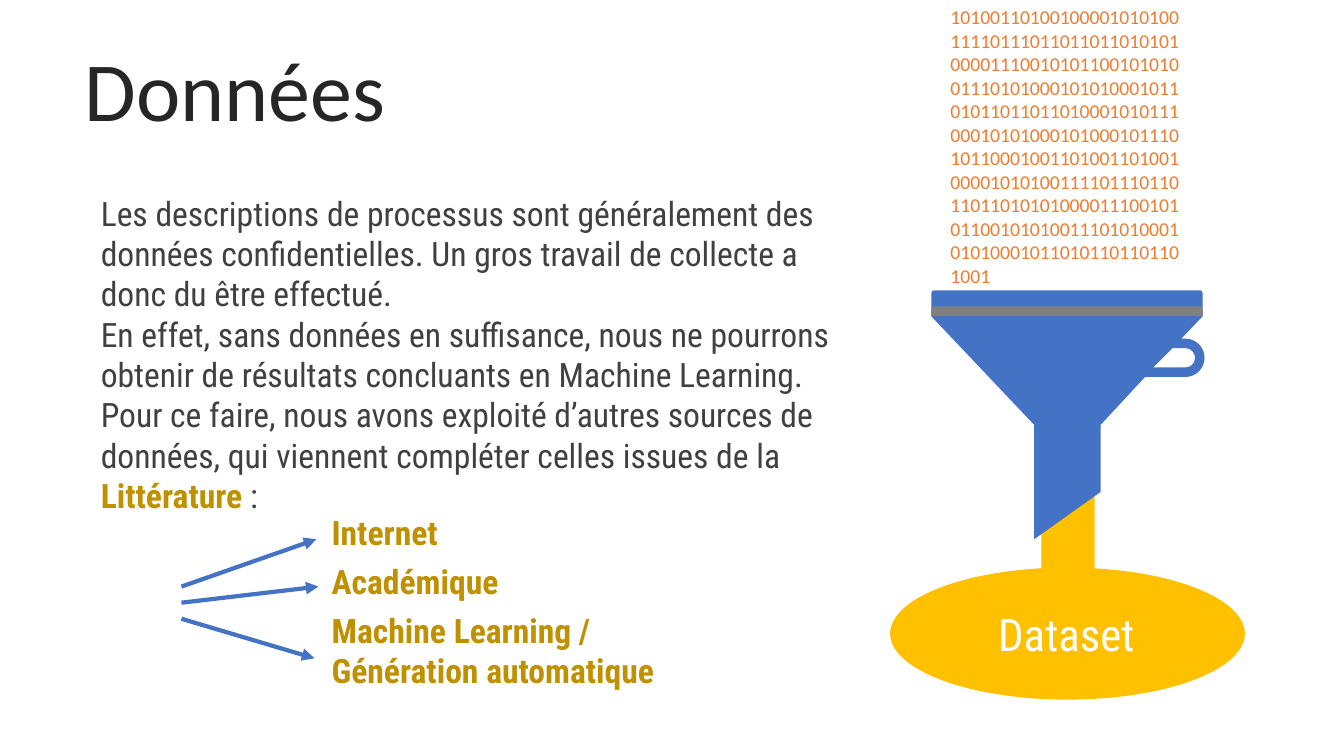
from dataclasses import dataclass
from math import cos, radians, sin

from lxml import etree
from pptx import Presentation
from pptx.dml.color import RGBColor
from pptx.enum.shapes import MSO_CONNECTOR, MSO_SHAPE
from pptx.enum.text import MSO_ANCHOR, MSO_AUTO_SIZE, PP_ALIGN
from pptx.oxml.ns import qn
from pptx.util import Pt

RECTANGLE, OVAL = MSO_SHAPE.RECTANGLE, MSO_SHAPE.OVAL
STRAIGHT = MSO_CONNECTOR.STRAIGHT
TOP, NO_AUTOFIT = MSO_ANCHOR.TOP, MSO_AUTO_SIZE.NONE
LEFT, CENTER, JUSTIFY = PP_ALIGN.LEFT, PP_ALIGN.CENTER, PP_ALIGN.JUSTIFY


@dataclass(frozen=True)
class Theme:
    heading_font: str = "Calibri"
    body_font: str = "Roboto Condensed"
    title_color: str = "262626"
    body_color: str = "404040"
    accent: str = "BF9000"
    blue: str = "4472C4"
    gold: str = "FFC000"
    gray: str = "808080"
    orange: str = "ED7D31"
    white: str = "FFFFFF"
    title_size: float = 60
    label_size: float = 32
    body_size: float = 24
    bits_size: float = 14
    arrow_width: float = 3


class Page:
    """Draws on one slide; all lengths are in points."""

    def __init__(self, slide, theme):
        self.slide = slide
        self.theme = theme
        self.shapes = slide.shapes

    def place(self, shape, left, top, width, height):
        shape.left, shape.top = Pt(left), Pt(top)
        shape.width, shape.height = Pt(width), Pt(height)

    def set_text(self, box, paragraphs, font, size, color, bold=False,
                 align=LEFT, after=0, spacing=1.0):
        """Fill a box; each paragraph is a list of (text, is_accent) spans."""
        frame = box.text_frame
        frame.word_wrap = True
        frame.auto_size = NO_AUTOFIT
        frame.vertical_anchor = TOP
        for index, spans in enumerate(paragraphs):
            para = frame.add_paragraph() if index else frame.paragraphs[0]
            properties = para._p.get_or_add_pPr()
            properties.set("marL", "0")
            properties.set("indent", "0")
            etree.SubElement(properties, qn("a:buNone"))
            para.alignment = align
            para.line_spacing = spacing
            para.space_before, para.space_after = Pt(0), Pt(after)
            para.font.name, para.font.size = font, Pt(size)
            para.font.bold = bold
            para.font.color.rgb = RGBColor.from_string(color)
            for text, is_accent in spans:
                span = para.add_run()
                span.text = text
                if is_accent:
                    span.font.bold = True
                    span.font.color.rgb = RGBColor.from_string(self.theme.accent)

    def title(self, text, *area):
        box = self.slide.shapes.title
        self.place(box, *area)
        self.set_text(box, [[(text, False)]], self.theme.heading_font,
                      self.theme.title_size, self.theme.title_color, spacing=0.9)

    def body(self, index, paragraphs, *area, **style):
        box = self.slide.placeholders[index]
        self.place(box, *area)
        style.setdefault("color", self.theme.body_color)
        self.set_text(box, paragraphs, self.theme.body_font,
                      self.theme.body_size, **style)

    def text_box(self, text, *area, **style):
        box = self.slide.shapes.add_textbox(*map(Pt, area))
        self.set_text(box, [[(text, False)]], **style)

    def paint(self, shape, color):
        shape.shadow.inherit = False
        shape.fill.solid()
        shape.fill.fore_color.rgb = RGBColor.from_string(color)
        shape.line.fill.background()

    def block(self, kind, color, *area):
        self.paint(self.shapes.add_shape(kind, *map(Pt, area)), color)

    def outline(self, contours, color):
        (first, *rest), *holes = [[(Pt(x), Pt(y)) for x, y in contour]
                                  for contour in contours]
        builder = self.shapes.build_freeform(*first)
        builder.add_line_segments(rest, close=True)
        for start, *points in holes:
            builder.move_to(*start)
            builder.add_line_segments(points, close=True)
        self.paint(builder.convert_to_shape(), color)

    def arrow(self, start, end):
        connector = self.shapes.add_connector(STRAIGHT, *map(Pt, (*start, *end)))
        connector.line.color.rgb = RGBColor.from_string(self.theme.blue)
        connector.line.width = Pt(self.theme.arrow_width)
        properties = connector._element.spPr
        etree.SubElement(properties.find(qn("a:ln")), qn("a:tailEnd"),
                         type="triangle")
        etree.SubElement(properties, qn("a:effectLst"))


def arc(center_x, center_y, radius, start, end, steps=16):
    """Points on a circle, angles in degrees, clockwise from the right."""
    angles = [radians(start + (end - start) * step / steps)
              for step in range(steps + 1)]
    return [(center_x + radius * cos(angle), center_y + radius * sin(angle))
            for angle in angles]


def draw_funnel(page, theme):
    left, right, top, rim = 665.3, 859, 207.4, 226
    corner = 2
    handle_x, handle_y, handle_radius = 846.7, 255.6, 13.7
    hole_radius = handle_radius / 2
    body = [
        *arc(left + corner, top + corner, corner, 180, 270, 4),
        *arc(right - corner, top + corner, corner, 270, 360, 4),
        (right, rim), (843.8, handle_y - handle_radius),
        *arc(handle_x, handle_y, handle_radius, -90, 90),
        (817.9, handle_y + handle_radius),
        (786.2, 303.5), (786.2, 351.4), (738.7, 385.2), (738.7, 303.5),
        (left, rim),
    ]
    hole = [(837.4, handle_y - hole_radius),
            *arc(handle_x, handle_y, hole_radius, -90, 90),
            (823.7, handle_y + hole_radius)]

    page.shapes = page.slide.shapes.add_group_shape().shapes
    page.block(RECTANGLE, theme.gold, 743.8, 344.9, 38.2, 74.2)
    page.block(OVAL, theme.gold, 635.8, 405.4, 253.4, 94.3)
    page.outline([body, hole], theme.blue)
    page.block(RECTANGLE, theme.gray, left, 218.9, right - left, 6.9)
    page.shapes = page.slide.shapes


def main():
    theme = Theme()
    deck = Presentation()
    deck.slide_width, deck.slide_height = Pt(960), Pt(540)
    page = Page(deck.slides.add_slide(deck.slide_layouts[3]), theme)

    # Title and explanation
    page.title("Données", 53.3, 31.7, 906.7, 56.9)
    page.body(1, [
        [("Les descriptions de processus sont généralement des données "
          "confidentielles. Un gros travail de collecte a donc du être "
          "effectué.", False)],
        [("En effet, sans données en suffisance, nous ne pourrons obtenir "
          "de résultats concluants en Machine Learning.", False)],
        [("Pour ce faire, nous avons exploité d’autres sources de données, "
          "qui viennent compléter celles issues de la ", False),
         ("Littérature", True), (" :", False)],
    ], 64.8, 133.9, 547.2, 239.8)

    # Other sources, with arrows
    sources = ("Internet", "Académique",
               "Machine Learning / Génération automatique")
    page.body(2, [[(source, False)] for source in sources],
              229.7, 362.2, 298.8, 135.4,
              color=theme.accent, bold=True, after=6)
    tips = ((226, 385.2), (227.5, 419), (224.6, 470.2))
    for index, tip in enumerate(tips):
        page.arrow((129.6, 419 + 11.5 * index), tip)

    # Bits falling through the funnel into the dataset
    draw_funnel(page, theme)
    bits = ("10100110100100001010100" "11110111011011011010101"
            "00001110010101100101010" "01110101000101010001011"
            "01011011011010001010111" "00010101000101000101110"
            "10110001001101001101001" "00001010100111101110110"
            "11011010101000011100101" "01100101010011101010001"
            "01010001011010110110110" "1001")
    page.text_box(bits, 671.8, 0, 181.4, 211, font=theme.heading_font,
                  size=theme.bits_size, color=theme.orange, align=JUSTIFY)
    page.text_box("Dataset", 659.5, 429.8, 204.5, 46.1, font=theme.body_font,
                  size=theme.label_size, color=theme.white, align=CENTER)

    deck.save("out.pptx")


if __name__ == "__main__":
    main()
